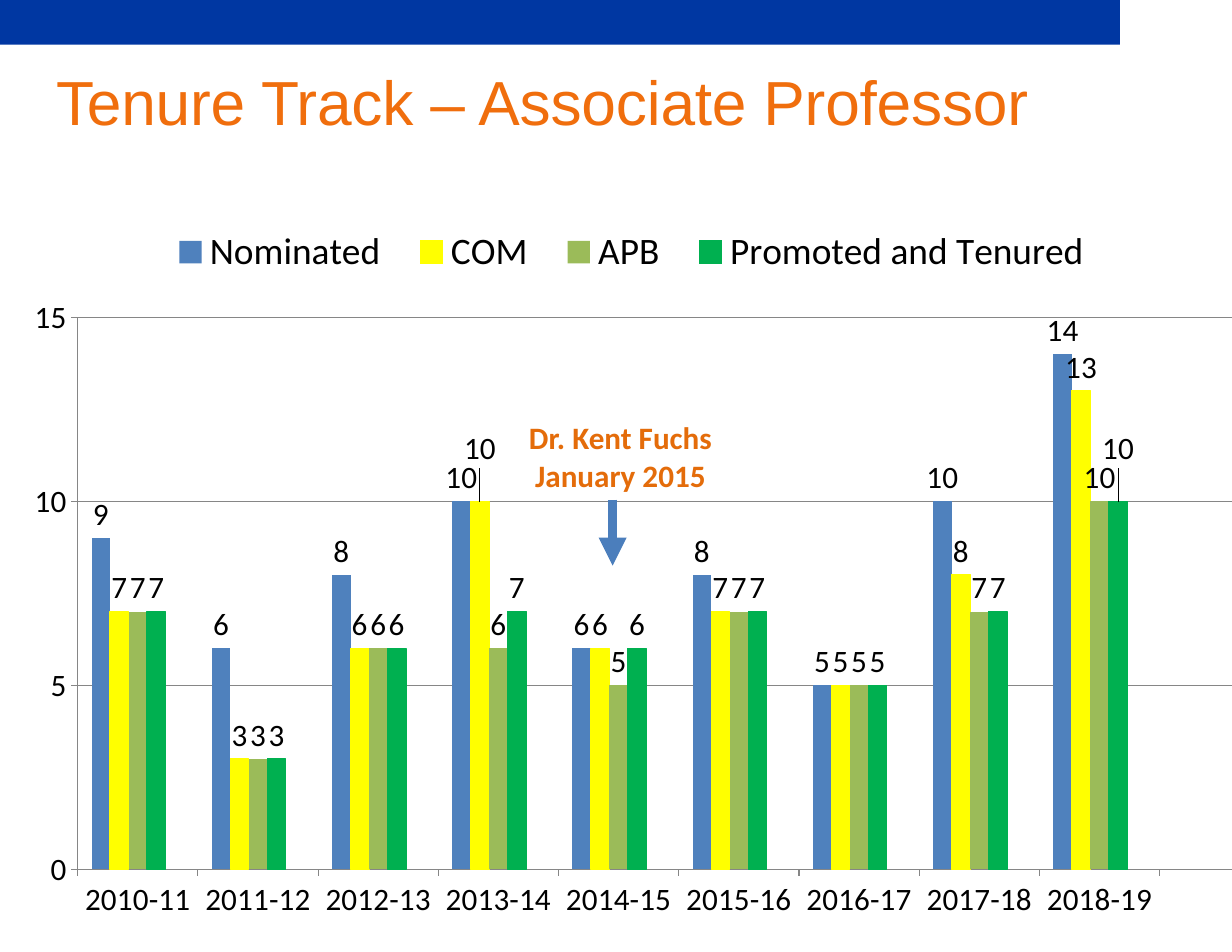
import pptx
import pptx.chart.data
import pptx.dml.color
import pptx.enum.chart
import pptx.enum.shapes
import pptx.enum.text
import pptx.oxml
import pptx.oxml.ns
import pptx.util
from pptx.util import Inches

COLORS = {
    "banner": "0037A2",
    "title": "F06E0D",
    "note": "E46C0A",
    "arrow": "4B7EBC",
    "grid": "868686",
    "text": "000000",
}
YEARS = [f"{year}-{year - 1999}" for year in range(2010, 2019)]
SERIES = [
    ("Nominated", [9, 6, 8, 10, 6, 8, 5, 10, 14], "4F81BD", False),
    ("COM", [7, 3, 6, 10, 6, 7, 5, 8, 13], "FFFF00", True),
    ("APB", [7, 3, 6, 6, 5, 7, 5, 7, 10], "9BBB59", False),
    ("Promoted and Tenured", [7, 3, 6, 7, 6, 7, 5, 7, 10], "00B050", True),
    ("Series 5", [None] * len(YEARS), "4BACC6", False),
]
HIDDEN_SERIES = 4
RAISED_LABELS = {"COM": 3, "Promoted and Tenured": 8}


def rgb(color):
    return pptx.dml.color.RGBColor.from_string(color)


def chart_xml(markup):
    namespace = pptx.oxml.ns.nsdecls("c")
    tag, rest = markup.split(">", 1)
    return pptx.oxml.parse_xml(f"{tag} {namespace}>{rest}")


def layout_xml(inner=False, **values):
    target = '<c:layoutTarget val="inner"/>' if inner else ""
    modes = "".join(f'<c:{axis}Mode val="edge"/>' for axis in "xy")
    sizes = "".join(f'<c:{key} val="{value}"/>' for key, value in values.items())
    return chart_xml(f"<c:layout><c:manualLayout>{target}{modes}{sizes}</c:manualLayout></c:layout>")


def replace_layout(parent, layout, index):
    for old in parent.findall(pptx.oxml.ns.qn("c:layout")):
        parent.remove(old)
    parent.insert(index, layout)


def write_text(shape, text, *, font, size, color, bold=False, align=None,
               line_spacing=None, space_before=None, spacing=None):
    frame = shape.text_frame
    frame.word_wrap = True
    frame.auto_size = pptx.enum.text.MSO_AUTO_SIZE.SHAPE_TO_FIT_TEXT
    frame.vertical_anchor = pptx.enum.text.MSO_ANCHOR.TOP
    frame.text = text
    for paragraph in frame.paragraphs:
        paragraph.alignment = align
        paragraph.line_spacing = line_spacing
        paragraph.space_before = space_before
        for run in paragraph.runs:
            run.font.name = font
            run.font.size = pptx.util.Pt(size)
            run.font.bold = bold
            run.font.color.rgb = rgb(color)
            if spacing is not None:
                run._r.get_or_add_rPr().set("spc", str(spacing))


def add_banner(slide):
    banner = slide.shapes.add_shape(
        pptx.enum.shapes.MSO_SHAPE.RECTANGLE, 0, 0, Inches(10), Inches(0.4))
    banner.shadow.inherit = False
    banner.fill.solid()
    banner.fill.fore_color.rgb = rgb(COLORS["banner"])
    banner.line.fill.background()


def format_title(slide):
    title = slide.shapes.title
    title.left, title.top = Inches(0.5), Inches(0.58)
    title.width, title.height = Inches(8.89), Inches(0.66)
    frame = title.text_frame
    frame.margin_left = frame.margin_right = frame.margin_bottom = 0
    frame.margin_top = Inches(0.01)
    write_text(title, "Tenure Track – Associate Professor", font="Arial", size=40,
               color=COLORS["title"], align=pptx.enum.text.PP_ALIGN.LEFT,
               line_spacing=pptx.util.Pt(46.1), space_before=pptx.util.Pt(0.9),
               spacing=-10)


def format_axes(chart):
    value_axis = chart.value_axis
    value_axis.minimum_scale, value_axis.maximum_scale = 0, 15
    value_axis.major_unit = 5
    value_axis.has_major_gridlines = True
    lines = [value_axis.major_gridlines.format.line]
    for axis in (chart.category_axis, value_axis):
        axis.major_tick_mark = pptx.enum.chart.XL_TICK_MARK.OUTSIDE
        axis.minor_tick_mark = pptx.enum.chart.XL_TICK_MARK.NONE
        lines.append(axis.format.line)
    for line in lines:
        line.color.rgb = rgb(COLORS["grid"])
        line.width = pptx.util.Pt(0.75)


def format_series(series, color, outlined):
    series.format.fill.solid()
    series.format.fill.fore_color.rgb = rgb(color)
    series.invert_if_negative = False
    if outlined:
        series.format.line.color.rgb = rgb(color)
        series.format.line.width = pptx.util.Pt(0.75)
    labels = series.data_labels
    labels.show_value = True
    labels.position = pptx.enum.chart.XL_LABEL_POSITION.OUTSIDE_END
    if series.name in RAISED_LABELS:
        label = series.points[RAISED_LABELS[series.name]].data_label
        label.font.size = pptx.util.Pt(20)
        label.position = pptx.enum.chart.XL_LABEL_POSITION.OUTSIDE_END
        for element in series._element.xpath("c:dLbls/c:dLbl"):
            element.insert(1, chart_xml(
                '<c:layout><c:manualLayout><c:x val="0"/><c:y val="-0.04"/>'
                "</c:manualLayout></c:layout>"))


def format_legend(chart):
    chart.has_legend = True
    legend = chart.legend
    legend.position = pptx.enum.chart.XL_LEGEND_POSITION.TOP
    legend.include_in_layout = False
    legend.font.size = pptx.util.Pt(24)
    element = legend._element
    replace_layout(element, layout_xml(x=0.11, y=0.02, w=0.74, h=0.06), 1)
    element.insert(1, chart_xml(
        f'<c:legendEntry><c:idx val="{HIDDEN_SERIES}"/><c:delete val="1"/></c:legendEntry>'))


def add_promotion_chart(slide):
    data = pptx.chart.data.CategoryChartData()
    data.categories = YEARS + [""]
    for name, values, _, _ in SERIES:
        data.add_series(name, values + [None])
    chart = slide.shapes.add_chart(
        pptx.enum.chart.XL_CHART_TYPE.COLUMN_CLUSTERED,
        Inches(0.08), Inches(1.92), Inches(11.58), Inches(6.42), data).chart
    chart.has_title = False
    chart.font.name = "Calibri"
    chart.font.size = pptx.util.Pt(20)
    chart.font.color.rgb = rgb(COLORS["text"])
    plot = chart.plots[0]
    plot.gap_width = 150
    plot.overlap = 0
    plot.vary_by_categories = False
    for series, (_, _, color, outlined) in zip(plot.series, SERIES):
        format_series(series, color, outlined)
    format_axes(chart)
    format_legend(chart)
    plot_area = chart.element.xpath("c:chart/c:plotArea")[0]
    replace_layout(plot_area, layout_xml(True, x=0.053, y=0.142, w=0.927, h=0.768), 0)


def add_note(slide):
    note = slide.shapes.add_textbox(Inches(4.33), Inches(3.69), Inches(2.42), Inches(0.77))
    write_text(note, "Dr. Kent Fuchs\nJanuary 2015", font="Calibri", size=20,
               color=COLORS["note"], bold=True, align=pptx.enum.text.PP_ALIGN.CENTER)


def add_arrow(slide):
    arrow = slide.shapes.add_connector(
        pptx.enum.shapes.MSO_CONNECTOR.STRAIGHT,
        Inches(5.47), Inches(4.46), Inches(5.47), Inches(5.05))
    arrow.line.color.rgb = rgb(COLORS["arrow"])
    arrow.line.width = pptx.util.Pt(6)
    namespace = pptx.oxml.ns.nsdecls("a")
    arrow.line._get_or_add_ln().append(
        pptx.oxml.parse_xml(f'<a:tailEnd {namespace} type="triangle"/>'))
    arrow._element.spPr.append(pptx.oxml.parse_xml(f"<a:effectLst {namespace}/>"))


def main():
    presentation = pptx.Presentation()
    presentation.slide_width, presentation.slide_height = Inches(11), Inches(8.5)
    slide = presentation.slides.add_slide(presentation.slide_layouts[5])
    add_banner(slide)
    format_title(slide)
    add_promotion_chart(slide)
    add_note(slide)
    add_arrow(slide)
    presentation.save("out.pptx")


if __name__ == "__main__":
    main()
